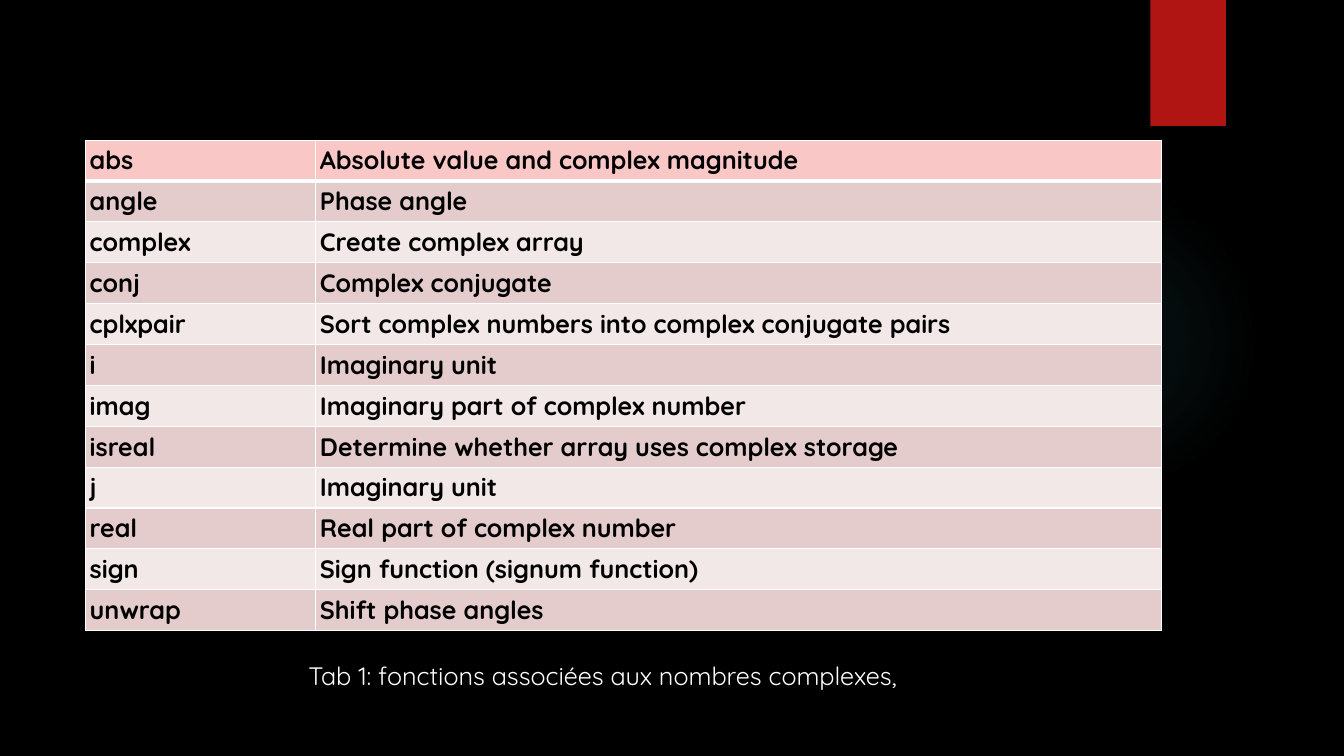
from dataclasses import dataclass

import lxml.etree
import pptx
import pptx.dml.color
import pptx.enum.shapes
import pptx.enum.text
import pptx.oxml
import pptx.oxml.ns
import pptx.util

Inches = pptx.util.Inches
Pt = pptx.util.Pt
qn = pptx.oxml.ns.qn


@dataclass(frozen=True)
class Theme:
    font: str = "Quicksand"
    text_size: int = 18
    background: str = "000000"
    accent: str = "B01513"
    glow: str = "50B9C1"
    header_fill: str = "F9C7C6"
    odd_fill: str = "E4CCCC"
    even_fill: str = "F2E8E7"
    rule: str = "FFFFFF"
    table_text: str = "000000"
    caption_text: str = "FFFFFF"


THEME = Theme()
FUNCTIONS = [
    ("abs", "Absolute value and complex magnitude"),
    ("angle", "Phase angle"),
    ("complex", "Create complex array"),
    ("conj", "Complex conjugate"),
    ("cplxpair", "Sort complex numbers into complex conjugate pairs"),
    ("i", "Imaginary unit"),
    ("imag", "Imaginary part of complex number"),
    ("isreal", "Determine whether array uses complex storage"),
    ("j", "Imaginary unit"),
    ("real", "Real part of complex number"),
    ("sign", "Sign function (signum function)"),
    ("unwrap", "Shift phase angles"),
]
NAME_COLUMN_SHARE = 0.214


def rgb(value):
    return pptx.dml.color.RGBColor.from_string(value)


def style_paragraph(paragraph, color, bold=False):
    font = paragraph.font
    font.name = THEME.font
    font.size = Pt(THEME.text_size)
    font.bold = bold
    font.color.rgb = rgb(color)


def add_plain_shape(slide, kind, box):
    shape = slide.shapes.add_shape(kind, *map(Inches, box))
    shape.shadow.inherit = False
    shape.line.fill.background()
    return shape


def add_glow(slide, box):
    """Add a circle that fades to transparent from its centre."""
    shape = add_plain_shape(slide, pptx.enum.shapes.MSO_SHAPE.OVAL, box)
    shape.fill.gradient()
    gradient = shape.element.spPr.find(qn("a:gradFill"))
    for child in list(gradient):
        gradient.remove(child)
    stops = lxml.etree.SubElement(gradient, qn("a:gsLst"))
    for position, opacity in ((0, 7), (36, 6), (69, 0)):
        stop = lxml.etree.SubElement(stops, qn("a:gs"), pos=str(position * 1000))
        color = lxml.etree.SubElement(stop, qn("a:srgbClr"), val=THEME.glow)
        lxml.etree.SubElement(color, qn("a:alpha"), val=str(opacity * 1000))
    circle = lxml.etree.SubElement(gradient, qn("a:path"), path="circle")
    sides = dict.fromkeys("ltrb", "50000")
    lxml.etree.SubElement(circle, qn("a:fillToRect"), **sides)


def add_accent_tab(slide, box):
    shape = add_plain_shape(slide, pptx.enum.shapes.MSO_SHAPE.RECTANGLE, box)
    shape.fill.solid()
    shape.fill.fore_color.rgb = rgb(THEME.accent)


def set_borders(cell, top, bottom):
    """Rule all four sides; top and bottom are widths in points."""
    properties = cell._tc.get_or_add_tcPr()
    widths = {"lnL": 1, "lnR": 1, "lnT": top, "lnB": bottom}
    for index, (side, width) in enumerate(widths.items()):
        line = lxml.etree.Element(qn(f"a:{side}"), w=str(Pt(width)))
        fill = lxml.etree.SubElement(line, qn("a:solidFill"))
        lxml.etree.SubElement(fill, qn("a:srgbClr"), val=THEME.rule)
        properties.insert(index, line)


def fill_cell(cell, text, row):
    cell.text = text
    cell.vertical_anchor = pptx.enum.text.MSO_ANCHOR.MIDDLE
    cell.margin_left = cell.margin_right = Inches(0.04)
    cell.margin_top = cell.margin_bottom = Inches(0.03)
    style_paragraph(cell.text_frame.paragraphs[0], THEME.table_text, bold=True)
    band = THEME.odd_fill if row % 2 else THEME.even_fill
    cell.fill.solid()
    cell.fill.fore_color.rgb = rgb(band if row else THEME.header_fill)
    set_borders(cell, top=3 if row == 1 else 1, bottom=1 if row else 3)


def add_function_table(slide, box):
    left, top, width, height = map(Inches, box)
    frame = slide.shapes.add_table(len(FUNCTIONS), 2, left, top, width, height)
    table = frame.table
    table.columns[0].width = int(width * NAME_COLUMN_SHARE)
    table.columns[1].width = width - table.columns[0].width
    for row, entry in enumerate(FUNCTIONS):
        for column, text in enumerate(entry):
            fill_cell(table.cell(row, column), text, row)


def add_caption(slide, box):
    text_frame = slide.shapes.add_textbox(*map(Inches, box)).text_frame
    text_frame.word_wrap = True
    paragraph = text_frame.paragraphs[0]
    paragraph.text = "Tab 1: fonctions associées aux nombres complexes,"
    style_paragraph(paragraph, THEME.caption_text)


def build_table_slide(presentation):
    slide = presentation.slides.add_slide(presentation.slide_layouts[6])
    slide.background.fill.solid()
    slide.background.fill.fore_color.rgb = rgb(THEME.background)
    add_glow(slide, (9.41, 1.83, 3.08, 3.08))
    add_accent_tab(slide, (11.41, 0, 0.75, 1.25))
    add_function_table(slide, (0.85, 1.39, 10.67, 4.87))
    add_caption(slide, (2.96, 6.5, 6.72, 0.4))


def main():
    presentation = pptx.Presentation()
    presentation.slide_width = Inches(13.33)
    presentation.slide_height = Inches(7.5)
    build_table_slide(presentation)
    presentation.save("out.pptx")


if __name__ == "__main__":
    main()
